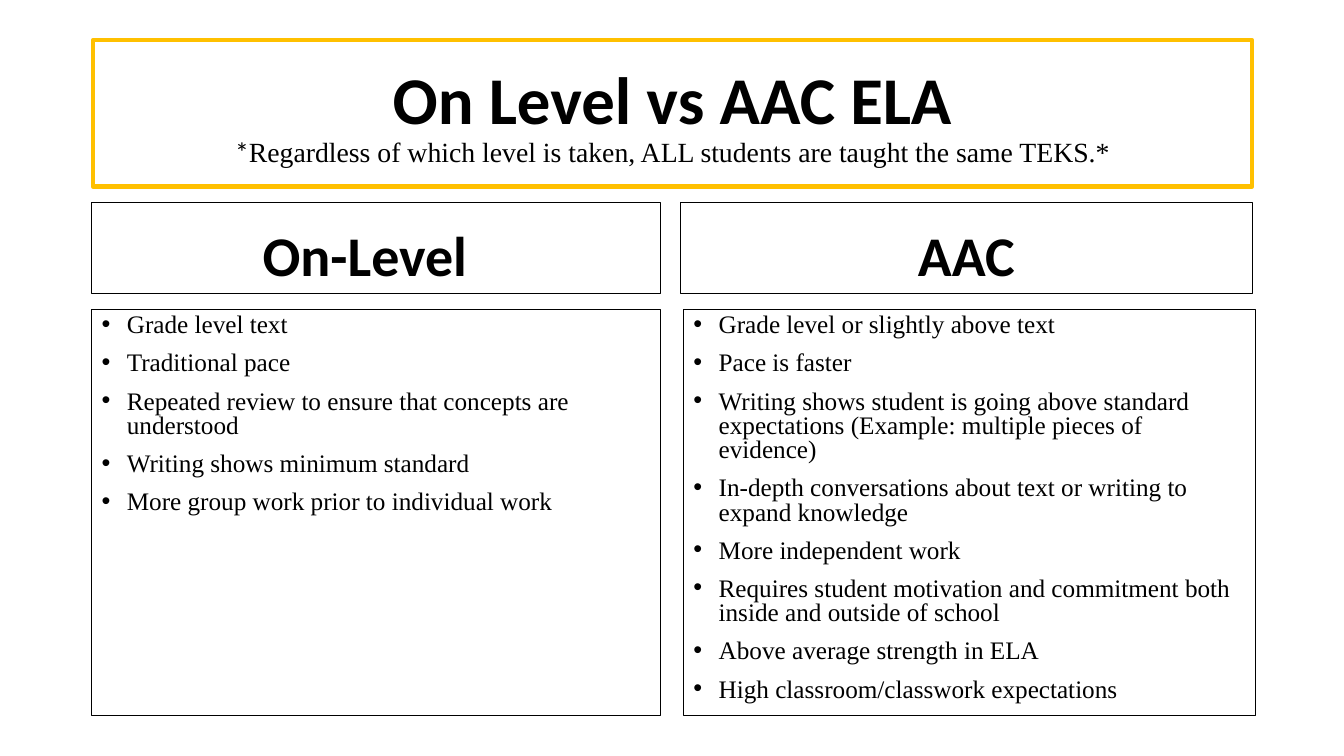
from lxml.etree import SubElement
from pptx import Presentation
from pptx.dml.color import RGBColor
from pptx.enum.shapes import MSO_SHAPE
from pptx.enum.text import MSO_ANCHOR, PP_ALIGN
from pptx.oxml.ns import qn
from pptx.util import Inches, Pt

COLORS = {"text": "000000", "border": "000000", "accent": "FFC000"}
HEADING_FONT = "Calibri"
BODY_FONT = "Times New Roman"

# Grid in inches: (left, width) for columns, (top, height) for rows
FULL_WIDTH = (0.92, 11.5)
LEFT_COLUMN = (0.91, 5.64)
RIGHT_HEADING_COLUMN = (6.75, 5.67)
RIGHT_LIST_COLUMN = (6.78, 5.67)
TITLE_ROW = (0.4, 1.45)
HEADING_ROW = (2.01, 0.9)
LIST_ROW = (3.07, 4.03)

ON_LEVEL_POINTS = [
    "Grade level text",
    "Traditional pace",
    "Repeated review to ensure that concepts are understood",
    "Writing shows minimum standard",
    "More group work prior to individual work",
]
AAC_POINTS = [
    "Grade level or slightly above text",
    "Pace is faster",
    "Writing shows student is going above standard expectations "
    "(Example: multiple pieces of evidence)",
    "In-depth conversations about text or writing to expand knowledge",
    "More independent work",
    "Requires student motivation and commitment both inside and outside of school",
    "Above average strength in ELA",
    "High classroom/classwork expectations",
]


def add_box(slide, column, row, anchor, border="border", weight=0.75):
    """Add an outlined, unfilled rectangle and return its text frame."""
    (left, width), (top, height) = column, row
    shape = slide.shapes.add_shape(
        MSO_SHAPE.RECTANGLE, Inches(left), Inches(top), Inches(width), Inches(height)
    )
    shape.shadow.inherit = False
    shape.fill.background()
    shape.line.color.rgb = RGBColor.from_string(COLORS[border])
    shape.line.width = Pt(weight)
    frame = shape.text_frame
    frame.word_wrap = True
    frame.vertical_anchor = anchor
    return frame


def add_run(paragraph, text, size, font=BODY_FONT, bold=False):
    run = paragraph.add_run()
    run.text = text
    run.font.size = Pt(size)
    run.font.name = font
    run.font.bold = bold
    run.font.color.rgb = RGBColor.from_string(COLORS["text"])


def add_text(frame, text, size, align=PP_ALIGN.CENTER, spacing=0.9, before=0,
             bullet=False, **run_format):
    """Write a paragraph, filling the frame's first one if it is still empty."""
    first = frame.paragraphs[0]
    paragraph = frame.add_paragraph() if first.runs else first
    paragraph.alignment = align
    paragraph.line_spacing = spacing
    paragraph.space_before = Pt(before if first.runs else 0)
    if bullet:
        properties = paragraph._p.get_or_add_pPr()
        properties.set("marL", str(Inches(0.25)))
        properties.set("indent", str(-Inches(0.25)))
        SubElement(properties, qn("a:buFont"), typeface="Arial")
        SubElement(properties, qn("a:buChar"), char="•")
    add_run(paragraph, text, size, **run_format)
    return paragraph


def add_title(slide):
    frame = add_box(slide, FULL_WIDTH, TITLE_ROW, MSO_ANCHOR.MIDDLE, "accent", 3)
    frame.margin_top = Inches(0.13)
    add_text(frame, "On Level vs AAC ELA", 47.7, font=HEADING_FONT, bold=True)
    subtitle = add_text(frame, "*", 19.8, font=HEADING_FONT)
    add_run(subtitle, "Regardless of which level is taken, ALL students "
                      "are taught the same TEKS.*", 19.8)


def add_heading(slide, column, text, right_margin=0.1):
    frame = add_box(slide, column, HEADING_ROW, MSO_ANCHOR.BOTTOM)
    frame.margin_right = Inches(right_margin)
    add_text(frame, text, 40, font=HEADING_FONT, bold=True)


def add_bullet_list(slide, column, points):
    frame = add_box(slide, column, LIST_ROW, MSO_ANCHOR.TOP)
    for point in points:
        add_text(frame, point, 18, align=PP_ALIGN.LEFT, spacing=0.8, before=10, bullet=True)


def main():
    presentation = Presentation()
    presentation.slide_width = Inches(13.33)
    presentation.slide_height = Inches(7.5)
    slide = presentation.slides.add_slide(presentation.slide_layouts[6])

    add_title(slide)
    add_heading(slide, LEFT_COLUMN, "On-Level", right_margin=0.32)
    add_bullet_list(slide, LEFT_COLUMN, ON_LEVEL_POINTS)
    add_heading(slide, RIGHT_HEADING_COLUMN, "AAC")
    add_bullet_list(slide, RIGHT_LIST_COLUMN, AAC_POINTS)

    presentation.save("out.pptx")


if __name__ == "__main__":
    main()
